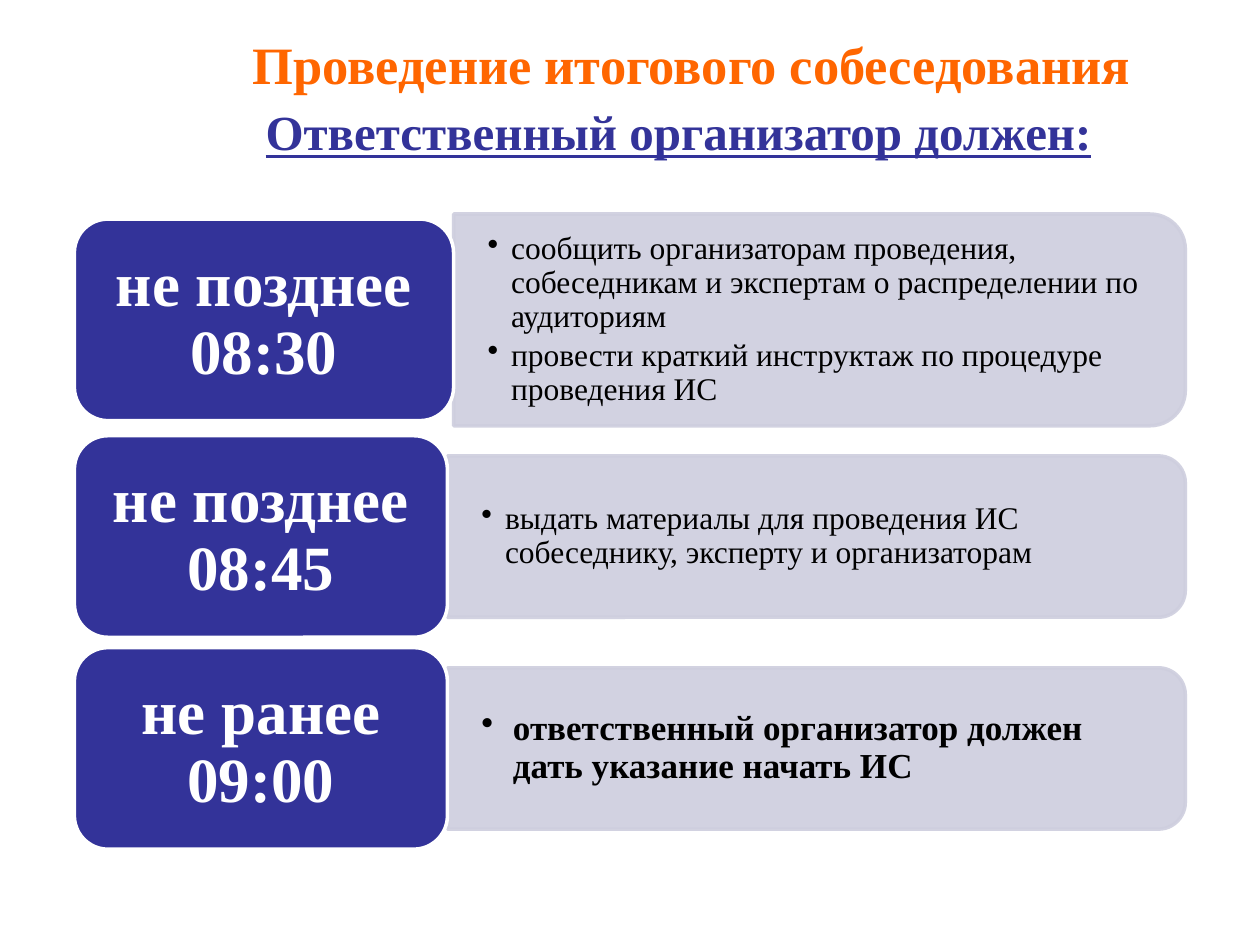
from lxml import etree
from pptx import Presentation
from pptx import util as u
from pptx.dml.color import RGBColor
from pptx.enum import shapes, text
from pptx.oxml.ns import qn

Pt = u.Pt
ORANGE = RGBColor(0xFF, 0x66, 0x00)
NAVY = RGBColor(0x33, 0x33, 0x99)
LAVENDER = RGBColor(0xCE, 0xCE, 0xDE)
WHITE = RGBColor(0xFF, 0xFF, 0xFF)
BLACK = RGBColor(0, 0, 0)
FONT = "Times New Roman"

# Content
TITLE = "Проведение итогового собеседования"
SUBTITLE = "Ответственный организатор должен:"
ROWS = [
    dict(time="не позднее 08:30", middle=182.8, label_width=216.7, panel_height=121,
         size=18, indent=13.5, bold=False,
         duties=["сообщить организаторам проведения, собеседникам и экспертам "
                 "о распределении по аудиториям",
                 "провести краткий инструктаж по процедуре проведения ИС"]),
    dict(time="не позднее 08:45", middle=306.6, label_width=213.2, panel_height=92.2,
         size=18, indent=13.5, bold=False,
         duties=["выдать материалы для проведения ИС собеседнику, эксперту "
                 "и организаторам"]),
    dict(time="не ранее 09:00", middle=427.7, label_width=213.2, panel_height=92.2,
         size=20, indent=18, bold=True,
         duties=["ответственный организатор должен дать указание начать ИС"]),
]
LEFT, RIGHT, LABEL_HEIGHT = 42.5, 677.3, 115.2


def write(shape, lines, size, color, bold=False, underline=None, align=text.PP_ALIGN.LEFT,
          anchor=text.MSO_ANCHOR.MIDDLE, insets=(7.2, 3.6), spacing=None, after=0, indent=0):
    frame = shape.text_frame
    frame.word_wrap = True
    frame.vertical_anchor = anchor
    frame.margin_left = frame.margin_right = Pt(insets[0])
    frame.margin_top = frame.margin_bottom = Pt(insets[1])
    for index, line in enumerate(lines):
        paragraph = frame.add_paragraph() if index else frame.paragraphs[0]
        paragraph.alignment = align
        paragraph.line_spacing = spacing
        paragraph.space_after = Pt(after)
        if indent:
            properties = paragraph._p.get_or_add_pPr()
            properties.set("marL", str(Pt(indent)))
            properties.set("indent", str(-Pt(indent)))
            etree.SubElement(properties, qn("a:buChar"), char="•")
        run = paragraph.add_run()
        run.text = line
        run.font.name, run.font.size = FONT, Pt(size)
        run.font.bold, run.font.underline = bold, underline
        run.font.color.rgb = color


def add_box(slide, left, top, width, height):
    return slide.shapes.add_textbox(Pt(left), Pt(top), Pt(width), Pt(height))


def add_shape(slide, kind, left, top, width, height, fill, line):
    shape = slide.shapes.add_shape(kind, Pt(left), Pt(top), Pt(width), Pt(height))
    shape.shadow.inherit = False
    shape.fill.solid()
    shape.fill.fore_color.rgb = fill
    shape.line.color.rgb = line
    shape.line.width = Pt(2)
    return shape


def add_row(slide, row):
    middle, height = row["middle"], row["panel_height"]
    panel_left = LEFT + row["label_width"]
    panel_width = RIGHT - panel_left

    # Panel: turned a quarter so that its rounded corners face right
    panel = add_shape(slide, shapes.MSO_SHAPE.ROUND_2_SAME_RECTANGLE,
                      panel_left + (panel_width - height) / 2, middle - panel_width / 2,
                      height, panel_width, LAVENDER, LAVENDER)
    panel.rotation = 90
    for color in panel._element.spPr.iter(qn("a:srgbClr")):
        etree.SubElement(color, qn("a:alpha"), val="90000")

    # Duties
    duties = add_box(slide, panel_left, middle - height * 0.45, panel_width - 5, height * 0.9)
    write(duties, row["duties"], row["size"], BLACK, bold=row["bold"], insets=(19.4, 10),
          spacing=0.9, after=row["size"] * 0.15, indent=row["indent"])

    # Time label
    label = add_shape(slide, shapes.MSO_SHAPE.ROUNDED_RECTANGLE, LEFT, middle - LABEL_HEIGHT / 2,
                      row["label_width"], LABEL_HEIGHT, NAVY, WHITE)
    write(label, [row["time"]], 36, WHITE, bold=True, align=text.PP_ALIGN.CENTER,
          insets=(10.8, 5.4), spacing=0.9)


def main():
    presentation = Presentation()
    presentation.slide_width, presentation.slide_height = Pt(720), Pt(540)
    slide = presentation.slides.add_slide(presentation.slide_layouts[6])

    write(add_box(slide, 71.3, 15, 648, 90), [TITLE], 30, ORANGE, bold=True,
          align=text.PP_ALIGN.CENTER, anchor=text.MSO_ANCHOR.TOP)
    for row in ROWS:
        add_row(slide, row)
    write(add_box(slide, 144.7, 54.7, 533, 41), [SUBTITLE], 28, NAVY, bold=True,
          underline=True, anchor=text.MSO_ANCHOR.TOP)

    presentation.save("out.pptx")


if __name__ == "__main__":
    main()
